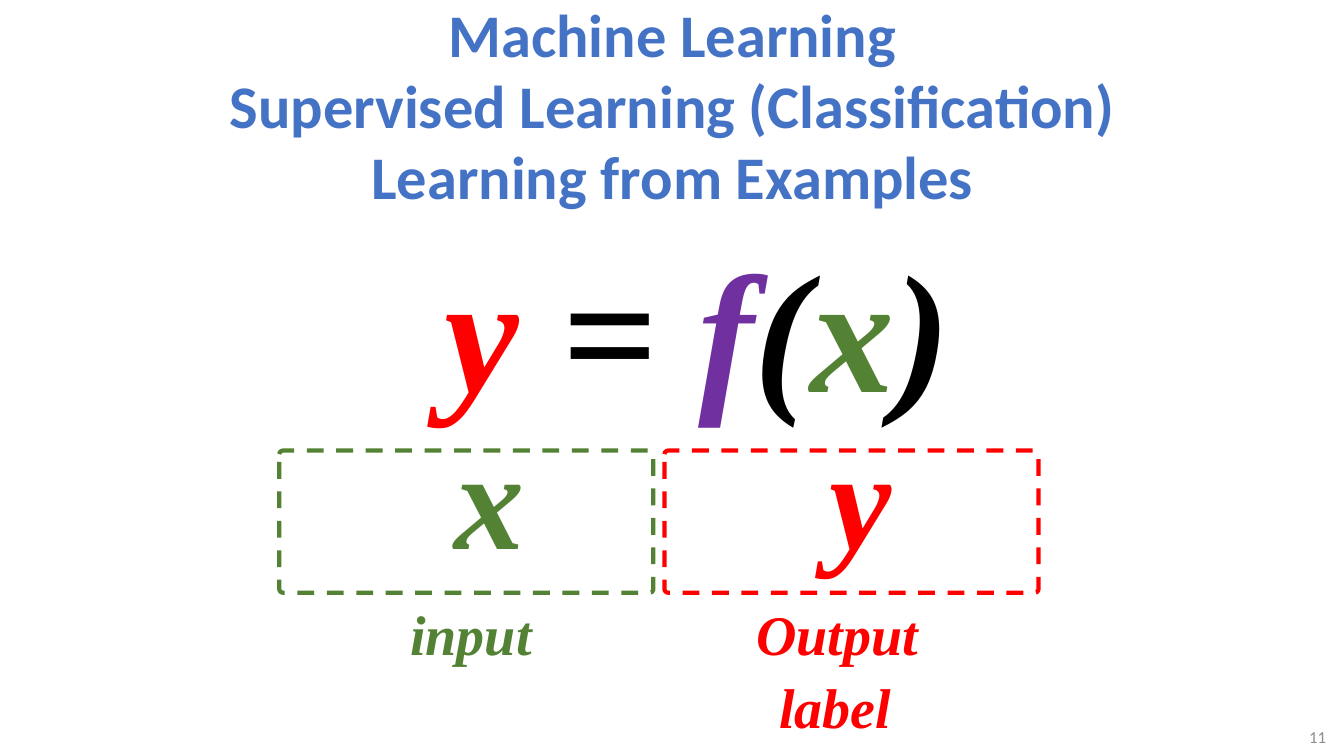
from pptx import Presentation
from pptx.dml.color import RGBColor
from pptx.enum import dml, shapes, text
from pptx.util import Inches, Pt

BLUE = RGBColor(0x44, 0x72, 0xC4)
GRAY = RGBColor(0x8C, 0x8C, 0x8C)
GREEN = RGBColor(0x54, 0x82, 0x35)
RED = RGBColor(0xFF, 0x00, 0x00)
PURPLE = RGBColor(0x70, 0x30, 0xA0)
BLACK = RGBColor(0x00, 0x00, 0x00)

prs = Presentation()
prs.slide_width = Inches(13.33)
prs.slide_height = Inches(7.5)
slide = prs.slides.add_slide(prs.slide_layouts[6])


def add_label(left, top, width, height, content, size, color, align, bold):
    """Add a wrapped, vertically centred Calibri text box."""
    box = slide.shapes.add_textbox(Inches(left), Inches(top), Inches(width), Inches(height))
    frame = box.text_frame
    frame.word_wrap = True
    frame.vertical_anchor = text.MSO_ANCHOR.MIDDLE
    frame.text = content
    paragraph = frame.paragraphs[0]
    paragraph.alignment = align
    for run in paragraph.runs:
        run.font.name = "Calibri"
        run.font.size = Pt(size)
        run.font.bold = bold
        run.font.color.rgb = color
    return paragraph


def add_math(left, top, width, height, size, parts):
    """Add an unwrapped bold italic text box from (text, colour) parts."""
    box = slide.shapes.add_textbox(Inches(left), Inches(top), Inches(width), Inches(height))
    frame = box.text_frame
    frame.word_wrap = False
    frame.auto_size = text.MSO_AUTO_SIZE.SHAPE_TO_FIT_TEXT
    for content, color in parts:
        run = frame.paragraphs[0].add_run()
        run.text = content
        run.font.name = "Times New Roman"
        run.font.size = Pt(size)
        run.font.bold = run.font.italic = True
        run.font.color.rgb = color


title = add_label(
    1.94, 0, 9.46, 2.12,
    "Machine Learning\vSupervised Learning (Classification)\vLearning from Examples",
    43.2, BLUE, text.PP_ALIGN.CENTER, True)
title.line_spacing = 0.98
add_label(12.2, 7.18, 1.05, 0.26, "11", 12, GRAY, text.PP_ALIGN.RIGHT, False)

for left, color in ((2.77, GREEN), (6.59, RED)):
    frame_box = slide.shapes.add_shape(
        shapes.MSO_SHAPE.ROUNDED_RECTANGLE,
        Inches(left), Inches(4.47), Inches(3.71), Inches(1.41))
    frame_box.adjustments[0] = 0.025
    frame_box.shadow.inherit = False
    frame_box.fill.background()
    frame_box.line.color.rgb = color
    frame_box.line.width = Pt(3)
    frame_box.line.dash_style = dml.MSO_LINE.DASH

add_math(4.41, 4.01, 0.9, 1.78, 100, [("x", GREEN)])
add_math(8.13, 4.01, 0.82, 1.78, 100, [("y", RED)])
add_math(4.31, 2.18, 5.27, 2.12, 120, [
    ("y", RED), (" = ", BLACK), ("f", PURPLE), ("(", BLACK), ("x", GREEN), (")", BLACK)])
add_math(3.97, 5.9, 1.42, 0.77, 40, [("input", GREEN)])
add_math(7.4, 5.9, 1.82, 0.77, 40, [("Output", RED)])
add_math(7.63, 6.62, 1.32, 0.77, 40, [("label", RED)])

prs.save("out.pptx")
